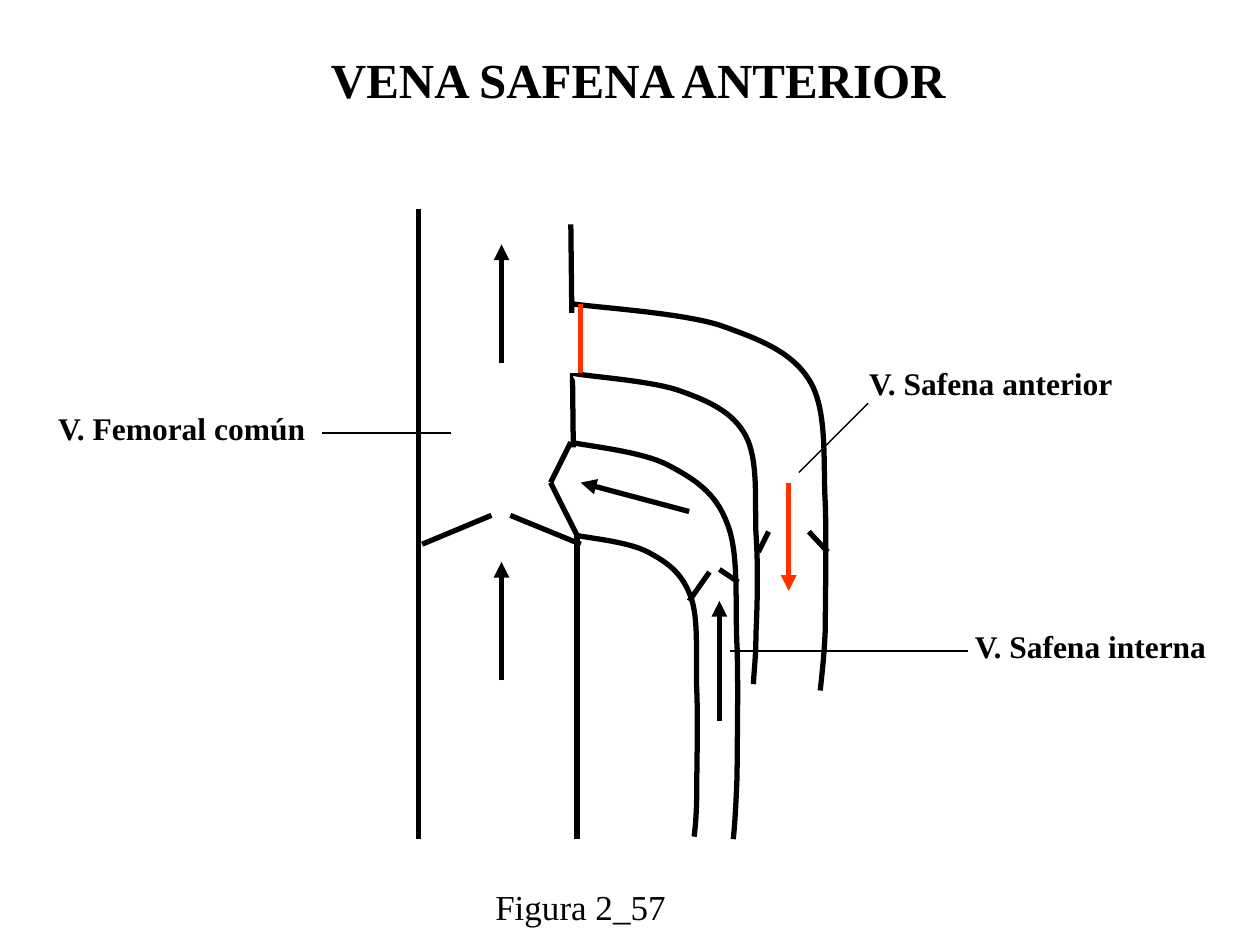
"""Build the slide on the anterior saphenous vein."""
from lxml import etree
from pptx import Presentation
from pptx.dml.color import RGBColor
from pptx.enum.shapes import MSO_CONNECTOR, MSO_SHAPE
from pptx.enum.text import MSO_ANCHOR, MSO_AUTO_SIZE, PP_ALIGN
from pptx.oxml.ns import qn
from pptx.util import Pt

BLACK = RGBColor(0x00, 0x00, 0x00)
WHITE = RGBColor(0xFF, 0xFF, 0xFF)
RED = RGBColor(0xFF, 0x33, 0x00)
FONT = "Times New Roman"
STRAIGHT = MSO_CONNECTOR.STRAIGHT
RECT = MSO_SHAPE.RECTANGLE
LEFT, CENTER = PP_ALIGN.LEFT, PP_ALIGN.CENTER
TOP = MSO_ANCHOR.TOP
NO_FIT = MSO_AUTO_SIZE.NONE
THICK, THIN = 3, 0.75

FEMORAL_WALLS = [
    (239, 119.5, 239, 479.5),
    (329.8, 306, 329.8, 479.5),
    (326.2, 128.2, 327.6, 255.6),
]
JUNCTION_VALVES = [
    (329.8, 306, 314.6, 275.8),
    (326.2, 252.7, 314.6, 275.8),
    (331.9, 311, 291.6, 294.5),
    (241.2, 311, 280.8, 294.5),
]
SAPHENOUS_VALVES = [
    (393.8, 343.4, 405.4, 326.9),
    (421.9, 332.6, 411.1, 325.4),
    (473, 315.4, 462.2, 303.8),
    (433.4, 315.4, 439.2, 303.8),
]
FLOW_ARROWS = [
    (411.1, 411.8, 411.1, 343.4),
    (286.6, 388.8, 286.6, 321.1),
    (393.8, 292.3, 331.9, 275.8),
    (286.6, 207.4, 286.6, 139.7),
]
INTERNA_INNER = [
    (329.8, 306),
    (336.2, 307.4), (359.3, 309.6), (370.1, 315.4),
    (380.9, 321.1), (389.5, 326.9), (394.6, 340.6),
    (399.6, 353.5), (397.4, 376.6), (398.2, 394.6),
    (398.9, 412.6), (398.2, 436.3), (398.2, 450),
    (398.2, 463.7), (397.4, 472.3), (396.7, 478.1),
]
INTERNA_OUTER = [
    (326.2, 252.7),
    (335.5, 254.9), (366.5, 257.8), (381.6, 265.7),
    (396.7, 273.6), (409, 281.5), (415.4, 298.8),
    (422.6, 316.1), (419.8, 345.6), (421.2, 370.1),
    (421.9, 393.8), (421.2, 424.8), (421.2, 442.8),
    (420.5, 461.5), (419.8, 472.3), (419, 479.5),
]
ANTERIOR_OUTER = [
    (326.2, 173.5),
    (339.8, 175.7), (388.1, 178.6), (411.1, 185.8),
    (433.4, 193.7), (452.9, 200.9), (463, 218.2),
    (473, 235.4), (470.2, 264.2), (471.6, 288),
    (472.3, 311), (471.6, 341.3), (471.6, 359.3),
    (470.9, 376.6), (469.4, 387.4), (468.7, 394.6),
]
ANTERIOR_INNER = [
    (326.2, 213.1),
    (336.2, 215.3), (371.5, 217.4), (388.1, 223.2),
    (404.6, 229), (419, 235.4), (426.2, 249.1),
    (433.4, 262.8), (431.3, 285.8), (432, 304.6),
    (433.4, 324), (432.7, 347.8), (432, 362.2),
    (432, 376.6), (430.6, 385.2), (430.6, 391),
]


def put_text(tf, text, size=18, bold=True, align=LEFT, wrap=True):
    tf.word_wrap = wrap
    tf.auto_size = NO_FIT
    tf.vertical_anchor = TOP
    p = tf.paragraphs[0]
    p.alignment = align
    r = p.add_run()
    r.text = text
    r.font.name = FONT
    r.font.size = Pt(size)
    r.font.bold = bold
    r.font.color.rgb = BLACK


class Diagram:
    def __init__(self, slide, color=BLACK, width=THICK):
        self.shapes = slide.shapes
        self.color = color
        self.width = width

    def title(self, text, x, y, w, h):
        sp = self.shapes.title
        sp.left, sp.top, sp.width, sp.height = Pt(x), Pt(y), Pt(w), Pt(h)
        put_text(sp.text_frame, text, size=28, align=CENTER)

    def label(self, text, x, y, w, h=28.8, **style):
        sp = self.shapes.add_textbox(Pt(x), Pt(y), Pt(w), Pt(h))
        put_text(sp.text_frame, text, **style)

    def line(self, x1, y1, x2, y2, color=None, width=None, arrow=False):
        sp = self.shapes.add_connector(STRAIGHT, Pt(x1), Pt(y1), Pt(x2), Pt(y2))
        sp.line.color.rgb = color or self.color
        sp.line.width = Pt(width or self.width)
        if arrow:
            etree.SubElement(sp.line._get_or_add_ln(), qn("a:tailEnd"), type="triangle")
        etree.SubElement(sp._element.spPr, qn("a:effectLst"))

    def lines(self, segments, **style):
        for segment in segments:
            self.line(*segment, **style)

    def curve(self, controls, fill=None):
        start, *rest = [(Pt(x), Pt(y)) for x, y in controls]
        builder = self.shapes.build_freeform(*start)
        builder.add_line_segments(rest, close=False)
        sp = builder.convert_to_shape()
        outline = sp._element.find(".//" + qn("a:path"))
        legs = outline.findall(qn("a:lnTo"))
        for i in range(0, len(legs), 3):
            bezier = etree.SubElement(outline, qn("a:cubicBezTo"))
            for leg in legs[i:i + 3]:
                bezier.append(leg[0])
                outline.remove(leg)
        self.finish(sp, fill, self.color, self.width)

    def patch(self, x, y, w, h, color):
        sp = self.shapes.add_shape(RECT, Pt(x), Pt(y), Pt(w), Pt(h))
        self.finish(sp, color, color, THIN)

    def finish(self, sp, fill, color, width):
        sp.shadow.inherit = False
        if fill is None:
            sp.fill.background()
        else:
            sp.fill.solid()
            sp.fill.fore_color.rgb = fill
        sp.line.color.rgb = color
        sp.line.width = Pt(width)


def main():
    prs = Presentation()
    prs.slide_width, prs.slide_height = Pt(720), Pt(540)
    d = Diagram(prs.slides.add_slide(prs.slide_layouts[5]))

    d.title("VENA SAFENA ANTERIOR", 36.7, 24.8, 656, 41)
    d.lines(FEMORAL_WALLS)
    d.curve(INTERNA_INNER)
    d.lines(JUNCTION_VALVES)
    d.label("Figura 2_57", 235.2, 502.6, 193, 31, size=20, bold=False, align=CENTER)
    d.curve(ANTERIOR_OUTER)
    d.curve(ANTERIOR_INNER, fill=WHITE)
    d.line(456.5, 270, 496.1, 230.4, width=THIN)
    d.label("V. Safena anterior", 489.6, 204.5, 156.2, wrap=False)
    d.line(416.9, 372, 553, 372, width=THIN)
    d.label("V. Safena interna", 550, 354.6, 150.5)
    d.label("V. Femoral común", 26.2, 230.4, 157.7, wrap=False)
    d.line(184.3, 247.5, 257.8, 247.5, width=THIN)
    d.lines(SAPHENOUS_VALVES)
    d.patch(320.4, 179.3, 11.5, 33.8, WHITE)
    d.curve(INTERNA_OUTER)
    d.lines(FLOW_ARROWS, arrow=True)
    d.line(331.9, 173.5, 331.9, 213.1, color=RED)
    d.line(450.7, 275.8, 450.7, 337.7, color=RED, arrow=True)
    prs.save("out.pptx")


if __name__ == "__main__":
    main()
